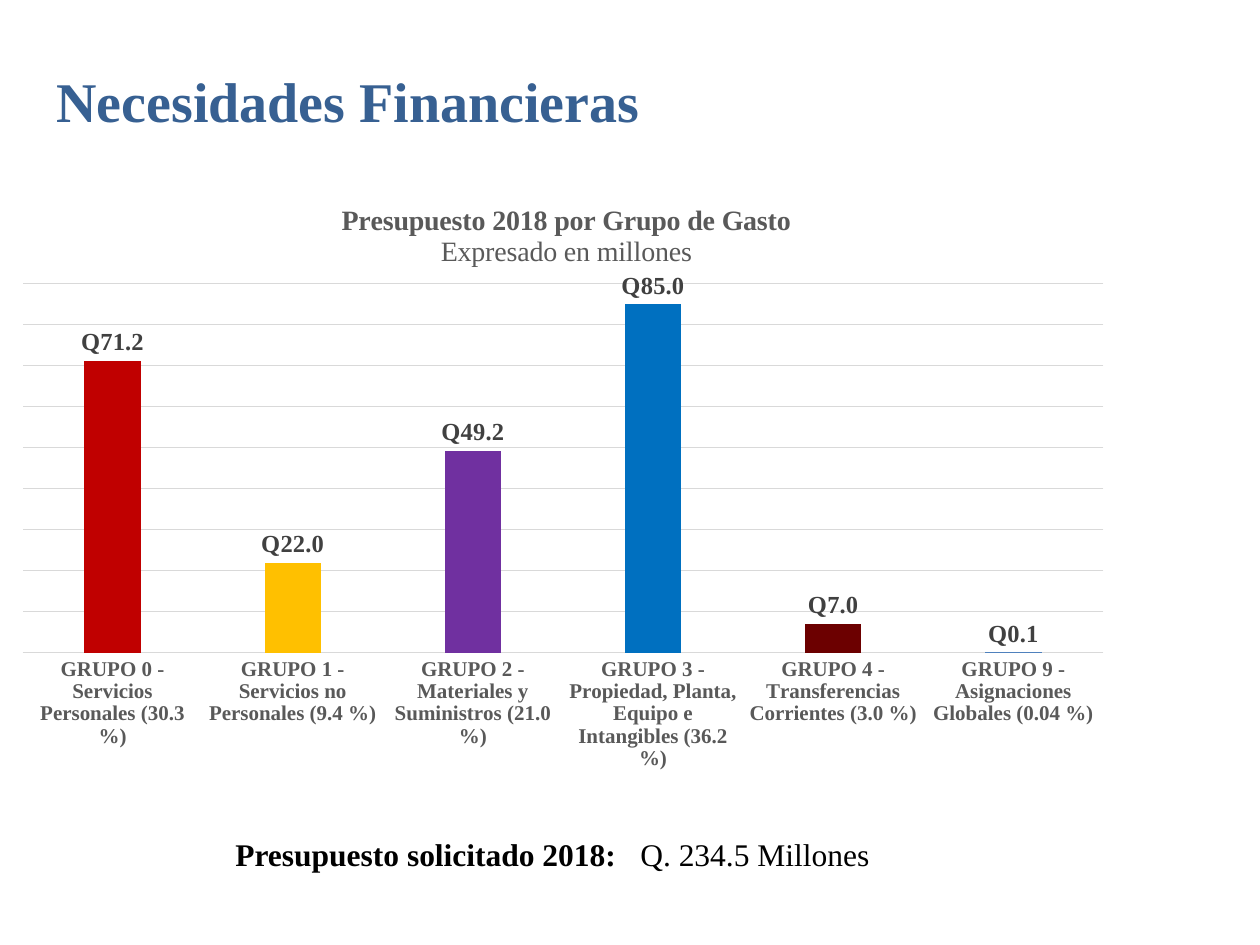
from lxml.etree import SubElement
from pptx import Presentation
from pptx.chart.data import CategoryChartData
from pptx.dml.color import RGBColor
from pptx.enum.chart import XL_CHART_TYPE, XL_LABEL_POSITION, XL_TICK_MARK
from pptx.enum.text import MSO_ANCHOR, PP_ALIGN
from pptx.oxml.ns import qn
from pptx.util import Pt

PX = 914400 / 126
FONT = "Times New Roman"
TITLE_BLUE = RGBColor(0x37, 0x60, 0x92)
BLACK = RGBColor(0, 0, 0)
TEXT_GRAY = RGBColor(0x59, 0x59, 0x59)
LABEL_GRAY = RGBColor(0x40, 0x40, 0x40)
GRID_GRAY = RGBColor(0xD9, 0xD9, 0xD9)

HEADING = "Necesidades Financieras"
TOTAL = ("Presupuesto solicitado 2018:", "Q. 234.5 Millones")
CHART_TITLE = (("Presupuesto 2018 por Grupo de Gasto", True),
               ("Expresado en millones", False))
QUETZALES = '"Q"#,##0.0'
GROUPS = [
    ("GRUPO 0 - Servicios Personales (30.3 %)", 71.2, RGBColor(0xC0, 0, 0)),
    ("GRUPO 1 - Servicios no Personales (9.4 %)", 22.0, RGBColor(0xFF, 0xC0, 0)),
    ("GRUPO 2 - Materiales y Suministros (21.0 %)", 49.2, RGBColor(0x70, 0x30, 0xA0)),
    ("GRUPO 3 - Propiedad, Planta, Equipo e Intangibles (36.2 %)", 85.0,
     RGBColor(0, 0x70, 0xC0)),
    ("GRUPO 4 - Transferencias Corrientes (3.0 %)", 7.0, RGBColor(0x6C, 0, 0)),
    ("GRUPO 9 - Asignaciones Globales (0.04 %)", 0.1, RGBColor(0x4F, 0x81, 0xBD)),
]


def px(*lengths):
    return [round(length * PX) for length in lengths]


def set_font(font, size, color, bold=True):
    for name, value in {"name": FONT, "size": Pt(size), "bold": bold}.items():
        setattr(font, name, value)
    font.color.rgb = color


def add_text_box(slide, box, anchor):
    frame = slide.shapes.add_textbox(*px(*box)).text_frame
    frame.word_wrap = True
    frame.vertical_anchor = anchor
    return frame.paragraphs[0]


def set_layout(element, index, **fractions):
    """Place a chart part by fractions of the chart's size."""
    for old in element.findall(qn("c:layout")):
        element.remove(old)
    layout = SubElement(element, qn("c:layout"))
    manual = SubElement(layout, qn("c:manualLayout"))
    values = {"xMode": "edge", "yMode": "edge", **fractions}
    if "w" in fractions:
        values = {"layoutTarget": "inner", **values}
    for name, value in values.items():
        SubElement(manual, qn(f"c:{name}"), val=str(value))
    element.insert(index, layout)


def add_budget_chart(slide):
    data = CategoryChartData(number_format=QUETZALES)
    data.categories = [name for name, _, _ in GROUPS]
    data.add_series("Series 1", [value for _, value, _ in GROUPS])
    chart = slide.shapes.add_chart(
        XL_CHART_TYPE.COLUMN_CLUSTERED, *px(0, 175, 1126, 605), data).chart
    chart.has_legend = False
    set_font(chart.font, 14, BLACK, False)

    frame = chart.chart_title.text_frame
    for index, (text, bold) in enumerate(CHART_TITLE):
        paragraph = frame.add_paragraph() if index else frame.paragraphs[0]
        paragraph.alignment = PP_ALIGN.CENTER
        run = paragraph.add_run()
        run.text = text
        set_font(run.font, 16, TEXT_GRAY, bold)
    title = chart.chart_title._element
    set_layout(title, 1, x=0.3, y=0.04)
    plot_area = chart._chartSpace.find(".//" + qn("c:plotArea"))
    set_layout(plot_area, 0, x=0.02, y=0.18, w=0.96, h=0.61)

    category_axis = chart.category_axis
    category_axis.major_tick_mark = XL_TICK_MARK.NONE
    set_font(category_axis.tick_labels.font, 12, TEXT_GRAY)
    value_axis = chart.value_axis
    value_axis.visible = False
    value_axis.has_major_gridlines = True
    for name, value in {"minimum_scale": 0, "maximum_scale": 90, "major_unit": 10}.items():
        setattr(value_axis, name, value)
    for line in (category_axis.format.line, value_axis.major_gridlines.format.line):
        line.color.rgb = GRID_GRAY
        line.width = Pt(0.75)

    plot = chart.plots[0]
    plot.gap_width, plot.overlap, plot.vary_by_categories = 219, -27, False
    series = plot.series[0]
    for index, (_, _, color) in enumerate(GROUPS):
        fill = series.points[index].format.fill
        fill.solid()
        fill.fore_color.rgb = color
    labels = series.data_labels
    for name, value in {"show_value": True, "position": XL_LABEL_POSITION.OUTSIDE_END,
                        "number_format": QUETZALES,
                        "number_format_is_linked": False}.items():
        setattr(labels, name, value)
    set_font(labels.font, 14, LABEL_GRAY)


def main():
    presentation = Presentation()
    presentation.slide_width, presentation.slide_height = px(1260, 945)
    slide = presentation.slides.add_slide(presentation.slide_layouts[6])

    heading = add_text_box(slide, (44, 26, 745, 149), MSO_ANCHOR.MIDDLE).add_run()
    heading.text = HEADING
    set_font(heading.font, 32, TITLE_BLUE)

    total = add_text_box(slide, (223, 829, 665, 50), MSO_ANCHOR.TOP)
    tabs = SubElement(total._p.get_or_add_pPr(), qn("a:tabLst"))
    SubElement(tabs, qn("a:tab"), pos=str(px(405)[0]), algn="l")
    label, amount = TOTAL
    for text, bold in ((label, True), ("\t" + amount, False)):
        run = total.add_run()
        run.text = text
        set_font(run.font, 18, BLACK, bold)

    add_budget_chart(slide)
    presentation.save("out.pptx")


if __name__ == "__main__":
    main()
